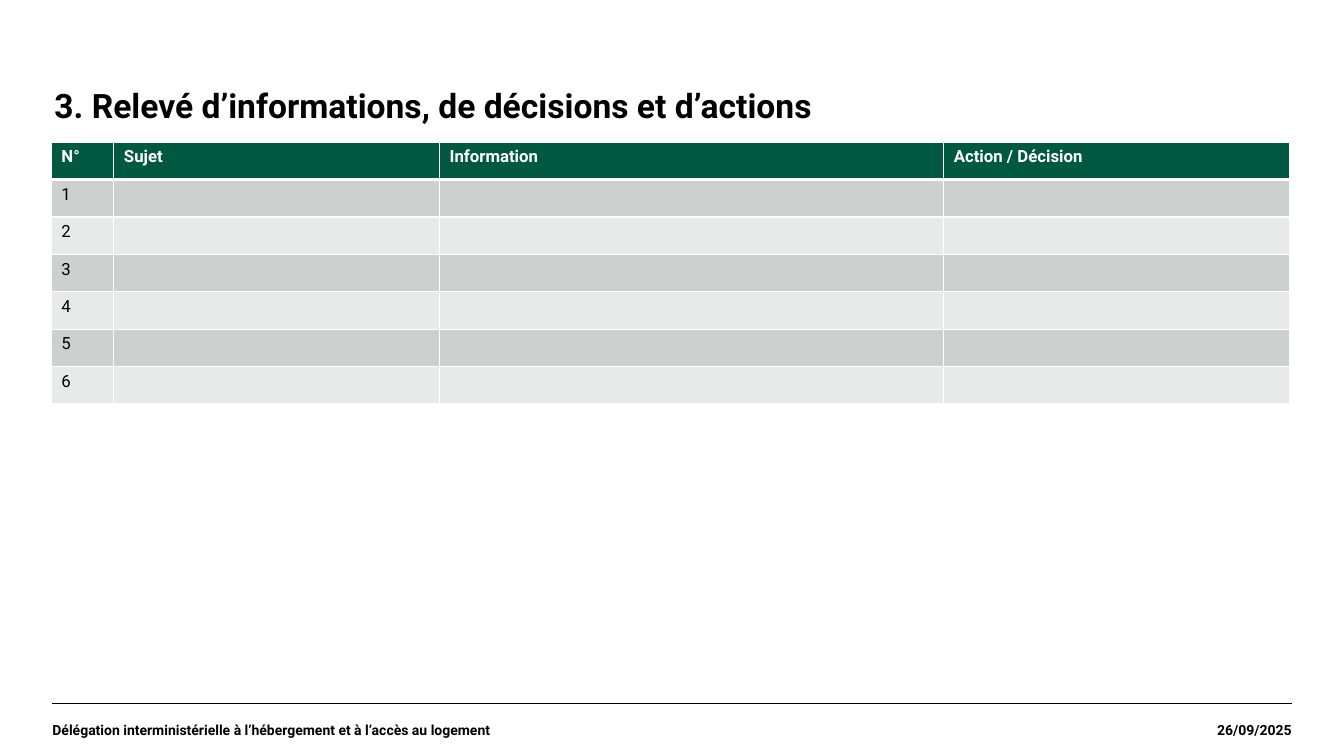
from lxml.etree import SubElement
from pptx import Presentation
from pptx.dml.color import RGBColor
from pptx.enum.shapes import MSO_CONNECTOR
from pptx.enum.text import MSO_ANCHOR, MSO_AUTO_SIZE, PP_ALIGN
from pptx.oxml.ns import qn
from pptx.util import Inches, Pt

FONT = "Roboto"
BLACK = RGBColor(0x00, 0x00, 0x00)
WHITE = RGBColor(0xFF, 0xFF, 0xFF)
GREEN = RGBColor(0x00, 0x58, 0x41)
BANDS = [RGBColor(0xCC, 0xD1, 0xCF), RGBColor(0xE7, 0xEA, 0xE9)]

HEADERS = ["N°", "Sujet", "Information", "Action / Décision"]
COL_WIDTHS = [0.62, 3.23, 5, 3.43]
ITEM_COUNT = 6
TABLE_HEIGHT = 2.6


def add_run(p, text, size, color=BLACK, bold=True):
    r = p.add_run()
    r.text = text
    r.font.name = FONT
    r.font.size = Pt(size)
    r.font.bold = bold
    r.font.color.rgb = color


def prepare_frame(tf, anchor):
    tf.word_wrap = True
    tf.auto_size = MSO_AUTO_SIZE.NONE
    tf.vertical_anchor = anchor
    tf.margin_left = tf.margin_top = tf.margin_right = tf.margin_bottom = 0


def add_title(s, text):
    sp = s.shapes.title
    sp.left, sp.top = Inches(0.54), Inches(0.89)
    sp.width, sp.height = Inches(12.28), Inches(1.05)
    prepare_frame(sp.text_frame, MSO_ANCHOR.TOP)
    p = sp.text_frame.paragraphs[0]
    p.alignment = PP_ALIGN.LEFT
    p.line_spacing = 0.9
    add_run(p, text, 24)


def add_footer_text(s, text, left, width, align):
    sp = s.shapes.add_textbox(Inches(left), Inches(6.98), Inches(width), Inches(0.52))
    prepare_frame(sp.text_frame, MSO_ANCHOR.MIDDLE)
    p = sp.text_frame.paragraphs[0]
    p.alignment = align
    add_run(p, text, 10)


def add_footer_rule(s):
    rule = s.shapes.add_connector(MSO_CONNECTOR.STRAIGHT, Inches(0.52), Inches(6.98),
                                  Inches(12.81), Inches(6.98))
    rule.line.color.rgb = BLACK
    rule.line.width = Pt(0.8)
    SubElement(rule.element.spPr, qn("a:effectLst"))


def set_borders(cell, widths):
    tc_pr = cell._tc.get_or_add_tcPr()
    for side, width in widths.items():
        ln = SubElement(tc_pr, qn(f"a:ln{side}"), w=str(Pt(width)))
        fill = SubElement(ln, qn("a:solidFill"))
        SubElement(fill, qn("a:srgbClr"), val=str(WHITE))


def fill_cell(cell, text, fill, color, bold, top, bottom):
    set_borders(cell, {"L": 1, "R": 1, "T": top, "B": bottom})
    cell.fill.solid()
    cell.fill.fore_color.rgb = fill
    p = cell.text_frame.paragraphs[0]
    if text:
        add_run(p, text, 12, color, bold)
    else:
        # Keeps an empty cell from stretching its row
        SubElement(p._p, qn("a:endParaRPr"), sz="1200")


def add_log_table(s):
    rows = [HEADERS] + [[str(n), "", "", ""] for n in range(1, ITEM_COUNT + 1)]
    table = s.shapes.add_table(len(rows), len(HEADERS), Inches(0.51), Inches(1.41),
                               Inches(sum(COL_WIDTHS)), Inches(TABLE_HEIGHT)).table
    for column, width in zip(table.columns, COL_WIDTHS):
        column.width = Inches(width)
    for i, texts in enumerate(rows):
        header = i == 0
        fill = GREEN if header else BANDS[(i - 1) % 2]
        color = WHITE if header else BLACK
        top, bottom = (3 if i == 1 else 1), (3 if header else 1)
        for j, text in enumerate(texts):
            fill_cell(table.cell(i, j), text, fill, color, header, top, bottom)


def main():
    prs = Presentation()
    prs.slide_width, prs.slide_height = Inches(13.33), Inches(7.5)
    s = prs.slides.add_slide(prs.slide_layouts[5])

    # Title and table
    add_title(s, "3. Relevé d’informations, de décisions et d’actions")
    add_log_table(s)

    # Footer
    add_footer_rule(s)
    add_footer_text(s, "Délégation interministérielle à l’hébergement et à l’accès au logement",
                    0.52, 8.61, PP_ALIGN.LEFT)
    add_footer_text(s, "26/09/2025", 11.1, 1.71, PP_ALIGN.RIGHT)

    prs.save("out.pptx")


if __name__ == "__main__":
    main()
